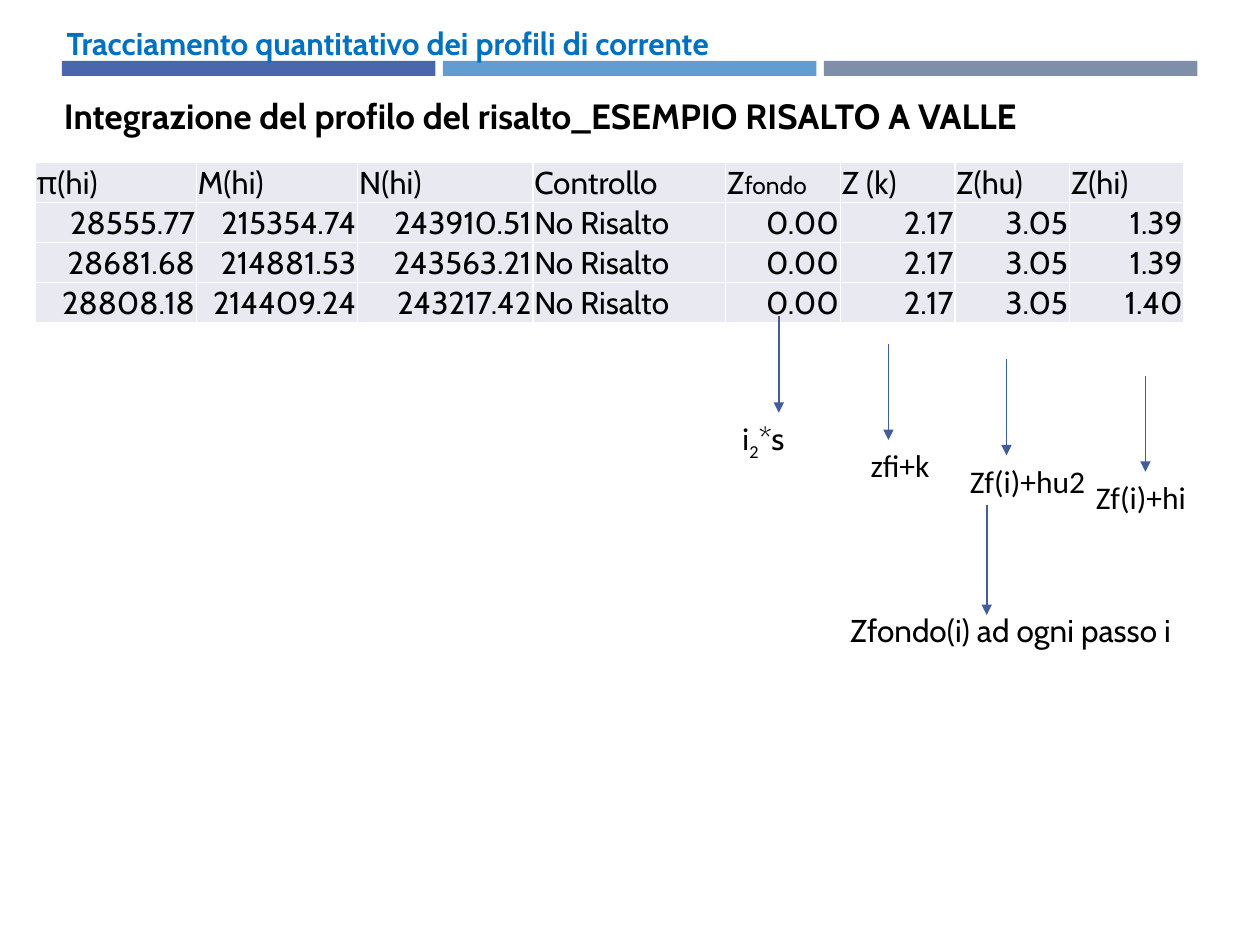
from dataclasses import dataclass

from lxml import etree
from pptx import Presentation
from pptx.dml.color import RGBColor
from pptx.enum.shapes import MSO_CONNECTOR, MSO_SHAPE
from pptx.enum.text import MSO_ANCHOR, MSO_AUTO_SIZE, PP_ALIGN
from pptx.oxml.ns import qn
from pptx.util import Cm, Pt

RECTANGLE = MSO_SHAPE.RECTANGLE
STRAIGHT = MSO_CONNECTOR.STRAIGHT
LEFT, RIGHT = PP_ALIGN.LEFT, PP_ALIGN.RIGHT
TOP, BOTTOM = MSO_ANCHOR.TOP, MSO_ANCHOR.BOTTOM
NO_AUTOFIT = MSO_AUTO_SIZE.NONE


@dataclass(frozen=True)
class Theme:
    font: str = "Cabin"
    note_font: str = "Calibri"
    text: str = "000000"
    heading: str = "0070C0"
    arrow: str = "435C9B"
    cell: str = "E9EAF1"
    border: str = "FFFFFF"
    bars: tuple = ("4A66AC", "629DD1", "7F8FA9")
    body_size: int = 18
    subheading_size: int = 20
    small_size: int = 14


THEME = Theme()


@dataclass(frozen=True)
class Span:
    text: str
    font: str = THEME.font
    size: int = THEME.body_size
    color: str = THEME.text
    bold: bool = False
    baseline: int = 0


@dataclass(frozen=True)
class Note:
    """A label with the arrow that leads to it; lengths in cm."""
    arrow_x: float
    arrow_top: float
    arrow_length: float
    left: float
    top: float
    width: float
    spans: tuple


def formula(text: str, baseline: int = 0) -> Span:
    return Span(text, font=THEME.note_font, baseline=baseline)


# Content
HEADING = Span("Tracciamento quantitativo dei profili di corrente",
               color=THEME.heading, bold=True)
SUBHEADING = Span("Integrazione del profilo del risalto_ESEMPIO RISALTO A VALLE",
                  size=THEME.subheading_size, bold=True)
HEADERS = ("π(hi)", "M(hi)", "N(hi)", "Controllo", "Zfondo", "Z (k)", "Z(hu)", "Z(hi)")
ROWS = (
    ("28555.77", "215354.74", "243910.51", "No Risalto", "0.00", "2.17", "3.05", "1.39"),
    ("28681.68", "214881.53", "243563.21", "No Risalto", "0.00", "2.17", "3.05", "1.39"),
    ("28808.18", "214409.24", "243217.42", "No Risalto", "0.00", "2.17", "3.05", "1.40"),
)
COLUMN_WIDTHS = (3.25, 3.25, 3.53, 3.89) + (2.31,) * 4
ROW_HEIGHT = 0.77
NOTES = (
    Note(15.7, 6.38, 1.94, 14.71, 8.33, 3.2,
         (formula("i"), formula("2", -25), Span("*s"))),
    Note(17.91, 6.93, 1.94, 17.3, 8.87, 3.2, (formula("zfi+k"),)),
    Note(20.29, 7.24, 1.94, 19.3, 9.18, 3.2, (formula("Zf(i)+hu2"),)),
    Note(23.09, 7.57, 1.94, 21.84, 9.52, 3.2, (formula("Zf(i)+hi"),)),
    Note(19.89, 10.19, 2.21, 16.89, 12.19, 7.19, (Span("Zfondo(i) ad ogni passo i"),)),
)


def apply_format(target, values: dict) -> None:
    for name, value in values.items():
        setattr(target, name, value)


def write(para, spans: tuple, alignment=LEFT) -> None:
    para.alignment = alignment
    for item in spans:
        span = para.add_run()
        span.text = item.text
        apply_format(span.font, {"name": item.font, "size": Pt(item.size), "bold": item.bold})
        span.font.color.rgb = RGBColor.from_string(item.color)
        if item.baseline:
            span.font._element.set("baseline", str(item.baseline * 1000))


def fill_box(box, spans: tuple) -> None:
    apply_format(box.text_frame, {"word_wrap": True, "auto_size": NO_AUTOFIT,
                                  "vertical_anchor": TOP})
    write(box.text_frame.paragraphs[0], spans)


def add_label(page, left: float, top: float, width: float, height: float,
              spans: tuple) -> None:
    fill_box(page.shapes.add_textbox(Cm(left), Cm(top), Cm(width), Cm(height)), spans)


def add_bars(page) -> None:
    for index, color in enumerate(THEME.bars):
        bar = page.shapes.add_shape(RECTANGLE, Cm(1.25 + index * 7.68), Cm(1.23),
                                    Cm(7.53), Cm(0.3))
        bar.shadow.inherit = False
        bar.fill.solid()
        bar.fill.fore_color.rgb = RGBColor.from_string(color)
        bar.line.fill.background()


def add_arrow(page, x: float, top: float, length: float) -> None:
    arrow = page.shapes.add_connector(STRAIGHT, Cm(x), Cm(top), Cm(x), Cm(top + length))
    arrow.line.width = Pt(1)
    arrow.line.color.rgb = RGBColor.from_string(THEME.arrow)
    etree.SubElement(arrow.line._get_or_add_ln(), qn("a:tailEnd"), type="triangle")
    etree.SubElement(arrow._element.spPr, qn("a:effectLst"))


def format_cell(cell, spans: tuple, alignment) -> None:
    apply_format(cell, {"margin_left": Cm(0.03), "margin_right": Cm(0.03),
                        "margin_top": Cm(0.03), "margin_bottom": 0,
                        "vertical_anchor": BOTTOM})
    properties = cell._tc.get_or_add_tcPr()
    for side in ("lnL", "lnR", "lnT", "lnB"):
        border = etree.SubElement(properties, qn(f"a:{side}"), w=str(Pt(1)))
        paint = etree.SubElement(border, qn("a:solidFill"))
        etree.SubElement(paint, qn("a:srgbClr"), val=THEME.border)
    cell.fill.solid()
    cell.fill.fore_color.rgb = RGBColor.from_string(THEME.cell)
    write(cell.text_frame.paragraphs[0], spans, alignment)


def add_results(page) -> None:
    lines = (HEADERS,) + ROWS
    table = page.shapes.add_table(len(lines), len(HEADERS), Cm(0.71), Cm(3.28),
                                  Cm(sum(COLUMN_WIDTHS)), Cm(ROW_HEIGHT * len(lines))).table
    apply_format(table, {"first_row": False, "horz_banding": False})
    for column, width in zip(table.columns, COLUMN_WIDTHS):
        column.width = Cm(width)
    for row_index, values in enumerate(lines):
        table.rows[row_index].height = Cm(ROW_HEIGHT)
        for column_index, value in enumerate(values):
            numeric = row_index > 0 and HEADERS[column_index] != "Controllo"
            spans = (Span(value),)
            if value == "Zfondo":
                spans = (Span("Z"), Span("fondo", size=THEME.small_size))
            format_cell(table.cell(row_index, column_index), spans,
                        RIGHT if numeric else LEFT)


def main() -> None:
    deck = Presentation()
    apply_format(deck, {"slide_width": Cm(25.4), "slide_height": Cm(19.05)})
    page = deck.slides.add_slide(deck.slide_layouts[5])

    # Headings and colour bars
    add_bars(page)
    title = page.shapes.title
    apply_format(title, {"left": Cm(1.09), "top": Cm(0.36),
                         "width": Cm(15.39), "height": Cm(1.02)})
    fill_box(title, (HEADING,))
    # Bring the title in front of the bars
    page.shapes._spTree.append(title._element)
    add_label(page, 1.04, 1.78, 24.36, 1.12, (SUBHEADING,))

    # Results and their explanations
    add_results(page)
    for note in NOTES:
        add_arrow(page, note.arrow_x, note.arrow_top, note.arrow_length)
        add_label(page, note.left, note.top, note.width, 1.02, note.spans)

    deck.save("out.pptx")


if __name__ == "__main__":
    main()
